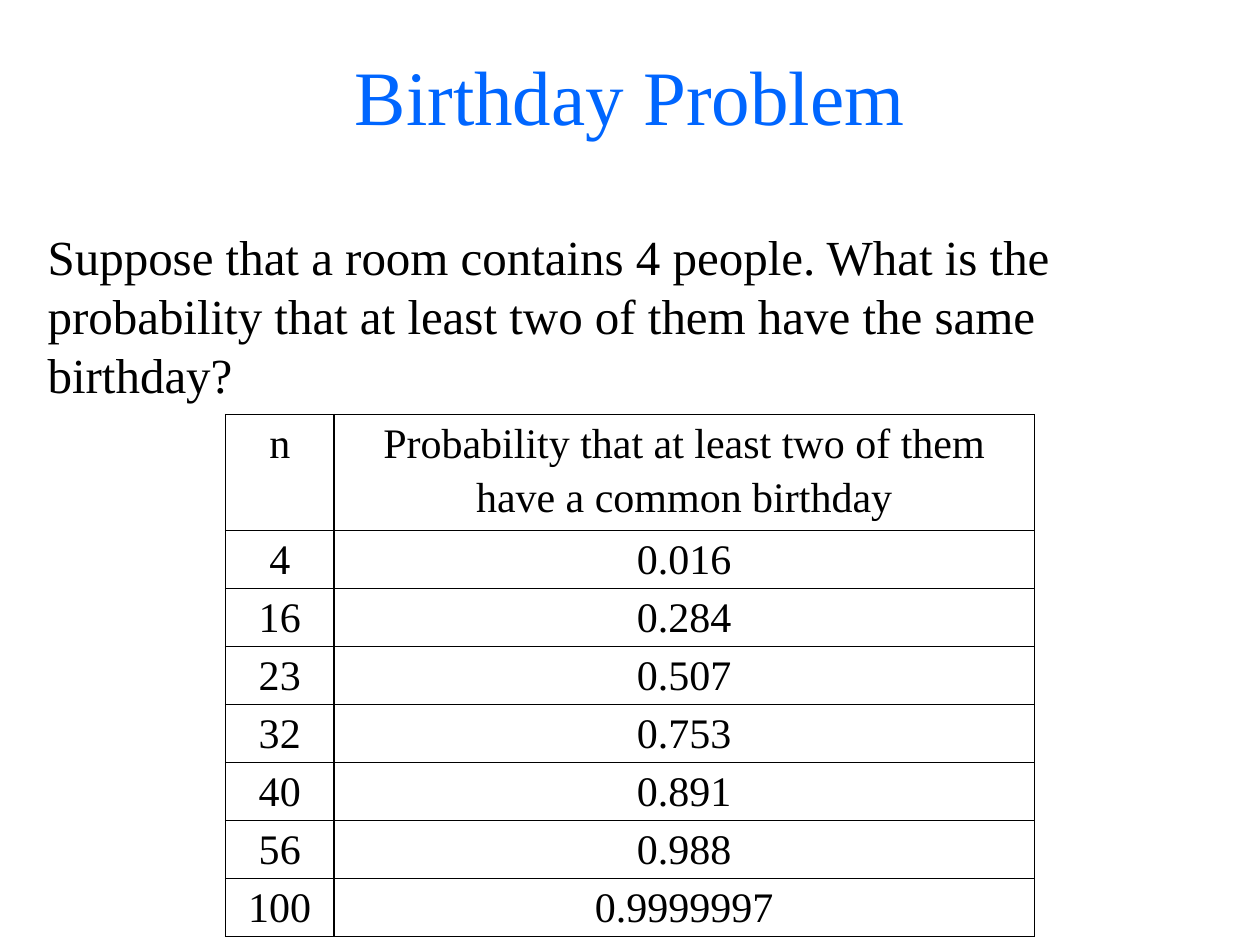
from lxml.etree import SubElement as Sub
from pptx import Presentation
from pptx.dml.color import RGBColor as Rgb
from pptx.enum.text import MSO_ANCHOR as Anchor, PP_ALIGN as Align
from pptx.oxml.ns import qn
from pptx.util import Inches, Pt

HUES = {"title": "0066FF", "ink": "000000"}
FONT = "Times New Roman"
TEXTS = [
    {"text": "Birthday Problem", "box": (0.5, 0.13, 9, 1.25),
     "size": 44, "hue": "title", "anchor": Anchor.MIDDLE,
     "para": {"alignment": Align.CENTER}},
    {"text": "Suppose that a room contains 4 people. What is the probability "
             "that at least two of them have the same birthday?",
     "box": (0.28, 1.75, 9.45, 4.95),
     "size": 28, "hue": "ink", "anchor": Anchor.TOP,
     "para": {"alignment": Align.LEFT, "space_before": Pt(5.6)}},
]
ROWS = [
    ("n", "Probability that at least two of them have a common birthday"),
    ("4", "0.016"),
    ("16", "0.284"),
    ("23", "0.507"),
    ("32", "0.753"),
    ("40", "0.891"),
    ("56", "0.988"),
    ("100", "0.9999997"),
]
LEFT, TOP, COLS, LINE = 1.79, 3.29, (0.86, 5.56), 0.42
CELL = {"margin_left": Inches(0.07), "margin_right": Inches(0.07),
        "margin_top": 0, "margin_bottom": 0, "vertical_anchor": Anchor.TOP}
CELL_PARA = {"alignment": Align.CENTER, "line_spacing": 1.15,
             "space_after": Pt(10)}


def apply(obj, vals):
    for key, val in vals.items():
        setattr(obj, key, val)


def write(frame, text, size, hue, para):
    first = frame.paragraphs[0]
    apply(first, para)
    run = first.add_run()
    run.text = text
    apply(run.font, {"name": FONT, "size": Pt(size)})
    run.font.color.rgb = Rgb.from_string(HUES[hue])


def border(cell):
    props = cell._tc.get_or_add_tcPr()
    for side in ("lnL", "lnR", "lnT", "lnB"):
        line = Sub(props, qn(f"a:{side}"), w=str(Pt(1)))
        fill = Sub(line, qn("a:solidFill"))
        Sub(fill, qn("a:srgbClr"), val=HUES["ink"])


def add_text(slide, item):
    frame = slide.shapes.add_textbox(*map(Inches, item["box"])).text_frame
    apply(frame, {"word_wrap": True, "vertical_anchor": item["anchor"]})
    write(frame, item["text"], item["size"], item["hue"], item["para"])


def add_grid(slide):
    high = LINE * (len(ROWS) + 1)
    table = slide.shapes.add_table(
        len(ROWS), len(COLS),
        *map(Inches, (LEFT, TOP, sum(COLS), high))).table
    apply(table, {"first_row": False, "horz_banding": False})
    for col, wide in zip(table.columns, COLS):
        col.width = Inches(wide)
    for i, (row, texts) in enumerate(zip(table.rows, ROWS)):
        row.height = Inches(LINE if i else 2 * LINE)
        for cell, text in zip(row.cells, texts):
            apply(cell, CELL)
            border(cell)
            cell.fill.background()
            write(cell.text_frame, text, 24, "ink", CELL_PARA)


def main():
    deck = Presentation()
    apply(deck, {"slide_width": Inches(10), "slide_height": Inches(7.5)})
    slide = deck.slides.add_slide(deck.slide_layouts[6])
    for item in TEXTS:
        add_text(slide, item)
    add_grid(slide)
    deck.save("out.pptx")


if __name__ == "__main__":
    main()
